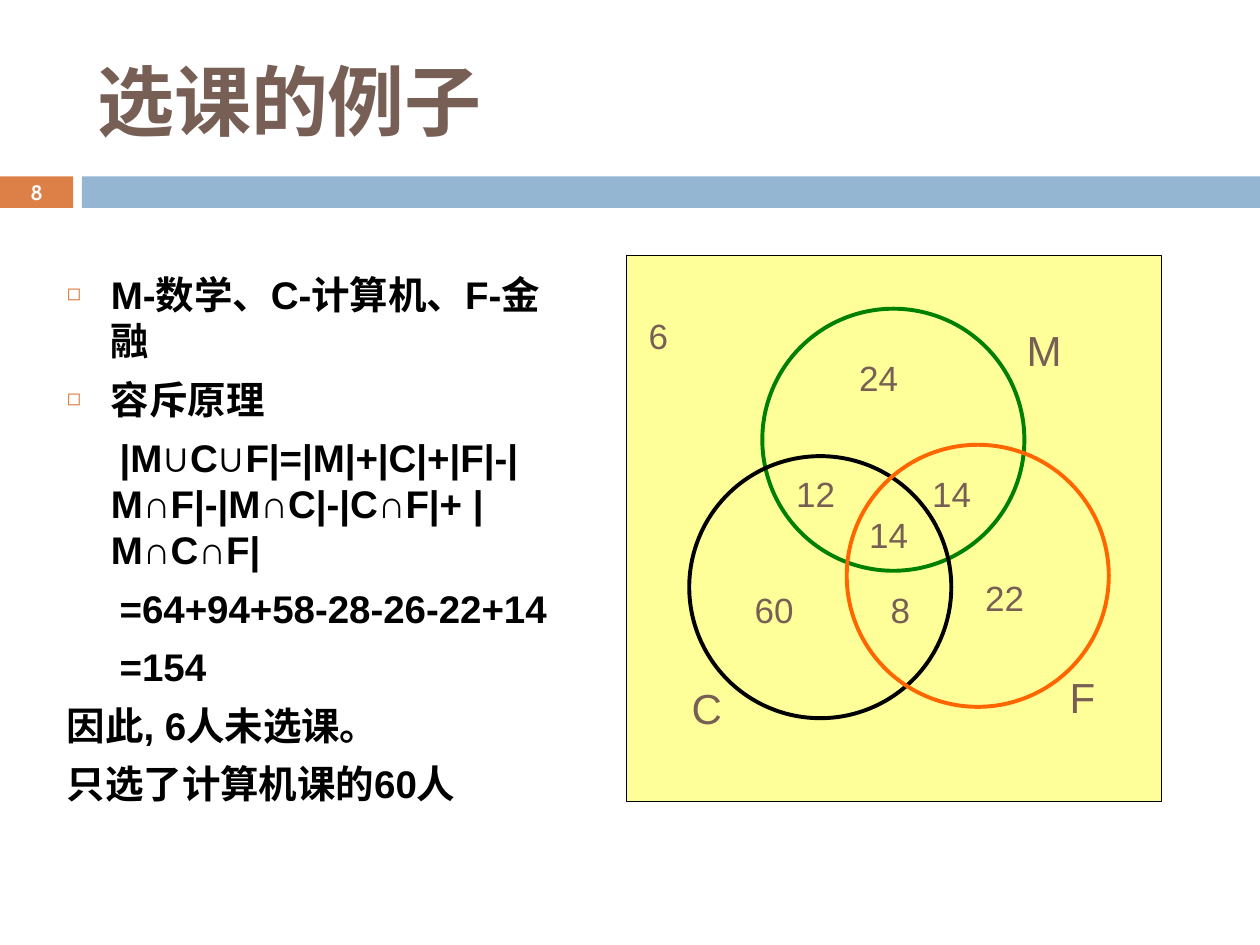
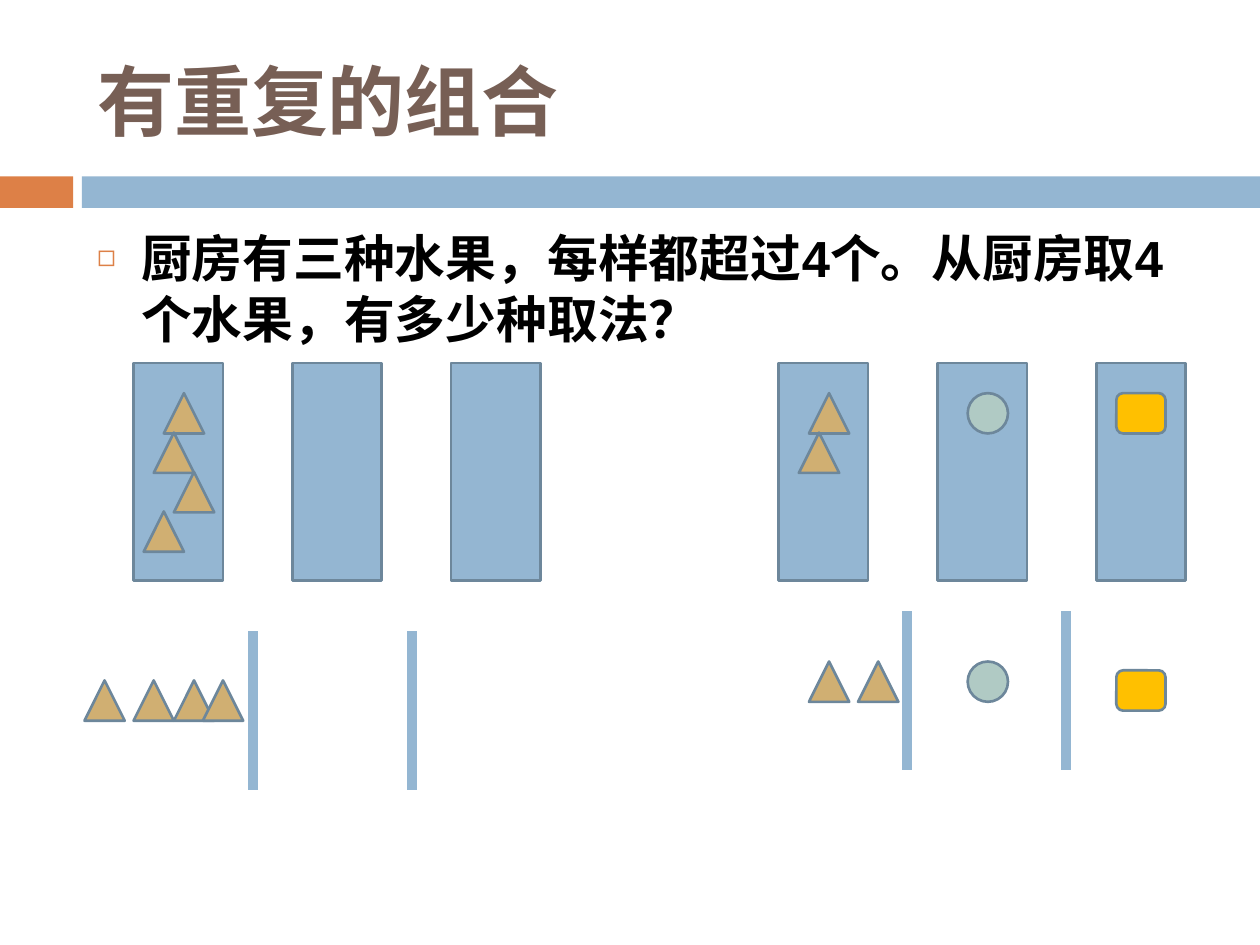
import pptx
import pptx.util
import pptx.dml.color
import pptx.enum.shapes
import pptx.enum.text
import pptx.oxml
import pptx.oxml.ns
import lxml.etree

Inches, Pt = pptx.util.Inches, pptx.util.Pt
SHAPE = pptx.enum.shapes.MSO_SHAPE
ANCHOR = pptx.enum.text.MSO_ANCHOR
ALIGN = pptx.enum.text.PP_ALIGN

ORANGE, BLUE, BROWN = "DD8047", "94B6D2", "775F55"
BLACK, WHITE, OUTLINE = "000000", "FFFFFF", "6D879B"
HANG = 0.35

# Slide 1: (text, bulleted, first-line indent)
COURSE_TITLE = "选课的例子"
COURSE_LINES = [
    ("M-数学、C-计算机、F-金融", True, -HANG),
    ("容斥原理", True, -HANG),
    ("|M∪C∪F|=|M|+|C|+|F|-|M∩F|-|M∩C|-|C∩F|+ |M∩C∩F|", False, 0.07),
    ("=64+94+58-28-26-22+14", False, 0.07),
    ("=154", False, 0.07),
    ("因此, 6人未选课。", False, -HANG),
    ("只选了计算机课的60人", False, -HANG),
]
VENN_DIAMETER = 2.08
VENN_CIRCLES = [(6.05, 2.45, "008000"), (5.47, 3.62, BLACK), (6.72, 3.53, "FF6600")]
VENN_NAMES = [("M", 8.05, 2.53), ("F", 8.39, 5.28), ("C", 5.39, 5.37)]
VENN_COUNTS = [
    ("14", 6.8, 4.03), ("14", 7.3, 3.7), ("12", 6.22, 3.7), ("8", 6.97, 4.62),
    ("24", 6.72, 2.78), ("60", 5.89, 4.62), ("22", 7.72, 4.53), ("6", 5.05, 2.45),
]

# Slide 2
FRUIT_TITLE = "有重复的组合"
FRUIT_LINES = [("厨房有三种水果，每样都超过4个。从厨房取4个水果，有多少种取法？", True, -HANG)]
FRUITS = {  # preset shape, fill, width, offset of each fruit in its jar
    "triangle": (SHAPE.ISOSCELES_TRIANGLE, "D0AF72", 0.32, [0.24, 0.16, 0.32, 0.08]),
    "circle": (SHAPE.OVAL, "B0CAC4", 0.32, [0.24]),
    "square": (SHAPE.ROUNDED_RECTANGLE, "FFC000", 0.39, [0.16]),
}
SELECTIONS = [
    {"left": 1.06, "taken": [4, 0, 0], "bar_left": 2.01, "bar_top": 5.01,
     "row": [("triangle", x, 5.4) for x in (0.67, 1.06, 1.38, 1.61)]},
    {"left": 6.18, "taken": [2, 1, 1], "bar_left": 7.2, "bar_top": 4.85,
     "row": [("triangle", 6.42, 5.25), ("triangle", 6.81, 5.25),
             ("circle", 7.68, 5.25), ("square", 8.86, 5.32)]},
]
JAR_TOP, JAR_WIDTH, JAR_HEIGHT, JAR_STEP = 2.88, 0.71, 1.73, 1.26
FRUIT_TOP, FRUIT_HEIGHT, FRUIT_STEP = 3.12, 0.32, 0.313
BAR_HEIGHT = 1.26


def rgb(color):
    return pptx.dml.color.RGBColor.from_string(color)


def add_run(p, text, size, color, bold=False, font="Arial"):
    r = p.add_run()
    r.text = text
    r.font.size, r.font.name, r.font.bold = Pt(size), font, bold
    r.font.color.rgb = rgb(color)


def place(sp, left, top, width, height):
    sp.left, sp.top = Inches(left), Inches(top)
    sp.width, sp.height = Inches(width), Inches(height)


def add_shape(s, kind, left, top, width, height, fill=None, line=None, weight=1.5):
    sp = s.shapes.add_shape(kind, Inches(left), Inches(top), Inches(width), Inches(height))
    sp.shadow.inherit = False
    if fill:
        sp.fill.solid()
        sp.fill.fore_color.rgb = rgb(fill)
    else:
        sp.fill.background()
    if line:
        sp.line.color.rgb = rgb(line)
        sp.line.width = Pt(weight)
    else:
        sp.line.fill.background()


def add_label(s, text, left, top, width, height, size, color=BROWN):
    tf = s.shapes.add_textbox(Inches(left), Inches(top), Inches(width), Inches(height)).text_frame
    tf.word_wrap = True
    add_run(tf.paragraphs[0], text, size, color)
    return tf


def add_bar(s, x, top):
    bar = s.shapes.add_connector(pptx.enum.shapes.MSO_CONNECTOR.STRAIGHT,
                                 Inches(x), Inches(top), Inches(x), Inches(top + BAR_HEIGHT))
    bar.line.color.rgb = rgb(BLUE)
    bar.line.width = Pt(6)
    lxml.etree.SubElement(bar._element.spPr, pptx.oxml.ns.qn("a:effectLst"))


def format_paragraph(p, bulleted, indent):
    """Set spacing, hanging indent and the square bullet."""
    p.space_before = Pt(7)
    pPr = p._p.get_or_add_pPr()
    pPr.set("marL", str(Inches(HANG)))
    pPr.set("indent", str(Inches(indent)))
    ns = pptx.oxml.ns.nsdecls("a")
    if bulleted:
        marks = [f'<a:buClr {ns}><a:srgbClr val="{ORANGE}"/></a:buClr>',
                 f'<a:buSzPct {ns} val="60000"/>', f'<a:buChar {ns} char="◻"/>']
    else:
        marks = [f"<a:buNone {ns}/>"]
    for mark in marks:
        pPr.append(pptx.oxml.parse_xml(mark))


def add_slide(prs, title, lines, body_box, body_size):
    """Add a slide with the shared bands, title and body list."""
    s = prs.slides.add_slide(prs.slide_layouts[1])
    add_shape(s, SHAPE.RECTANGLE, 0, 1.4, 0.58, 0.25, ORANGE)
    add_shape(s, SHAPE.RECTANGLE, 0.65, 1.4, 9.35, 0.25, BLUE)

    place(s.shapes.title, 0.67, 0.25, 8.92, 1.08)
    tf = s.shapes.title.text_frame
    tf.vertical_anchor = ANCHOR.MIDDLE
    tf.paragraphs[0].alignment = ALIGN.LEFT
    add_run(tf.paragraphs[0], title, 44, BROWN, True)

    body = s.placeholders[1]
    place(body, *body_box)
    tf = body.text_frame
    tf.auto_size = pptx.enum.text.MSO_AUTO_SIZE.NONE
    for i, (text, bulleted, indent) in enumerate(lines):
        p = tf.add_paragraph() if i else tf.paragraphs[0]
        format_paragraph(p, bulleted, indent)
        add_run(p, text, body_size, BLACK, True)
    return s


def add_fruit(s, name, left, top):
    kind, fill, width, _ = FRUITS[name]
    add_shape(s, kind, left, top, width, FRUIT_HEIGHT, fill, OUTLINE)


def build_course_slide(prs):
    s = add_slide(prs, COURSE_TITLE, COURSE_LINES, (0.43, 2.1, 4.25, 4.21), 22)
    number = s.shapes.add_textbox(Inches(0), Inches(1.39), Inches(0.58), Inches(0.27))
    tf = number.text_frame
    tf.margin_top = tf.margin_bottom = 0
    tf.vertical_anchor = ANCHOR.MIDDLE
    tf.paragraphs[0].alignment = ALIGN.CENTER
    add_run(tf.paragraphs[0], "8", 11.9, WHITE, True, "Cabin")

    add_shape(s, SHAPE.RECTANGLE, 4.97, 2.03, 4.25, 4.33, "FFFF99", BLACK, 0.75)
    for left, top, color in VENN_CIRCLES:
        add_shape(s, SHAPE.OVAL, left, top, VENN_DIAMETER, VENN_DIAMETER, line=color, weight=2.25)
    for text, left, top in VENN_NAMES:
        add_label(s, text, left, top, 0.5, 0.5, 24)
    for text, left, top in VENN_COUNTS:
        add_label(s, text, left, top, 0.58, 0.43, 20)


def build_fruit_slide(prs):
    s = add_slide(prs, FRUIT_TITLE, FRUIT_LINES, (0.67, 1.75, 8.92, 4.92), 29)
    for selection in SELECTIONS:
        for i, (name, count) in enumerate(zip(FRUITS, selection["taken"])):
            left = selection["left"] + i * JAR_STEP
            add_shape(s, SHAPE.RECTANGLE, left, JAR_TOP, JAR_WIDTH, JAR_HEIGHT, BLUE, OUTLINE)
            for j, offset in enumerate(FRUITS[name][3][:count]):
                add_fruit(s, name, left + offset, FRUIT_TOP + j * FRUIT_STEP)
        for i in range(2):
            add_bar(s, selection["bar_left"] + i * JAR_STEP, selection["bar_top"])
        for fruit in selection["row"]:
            add_fruit(s, *fruit)


def main():
    prs = pptx.Presentation()
    prs.slide_width, prs.slide_height = Inches(10), Inches(7.5)
    build_course_slide(prs)
    build_fruit_slide(prs)
    prs.save("out.pptx")


if __name__ == "__main__":
    main()
